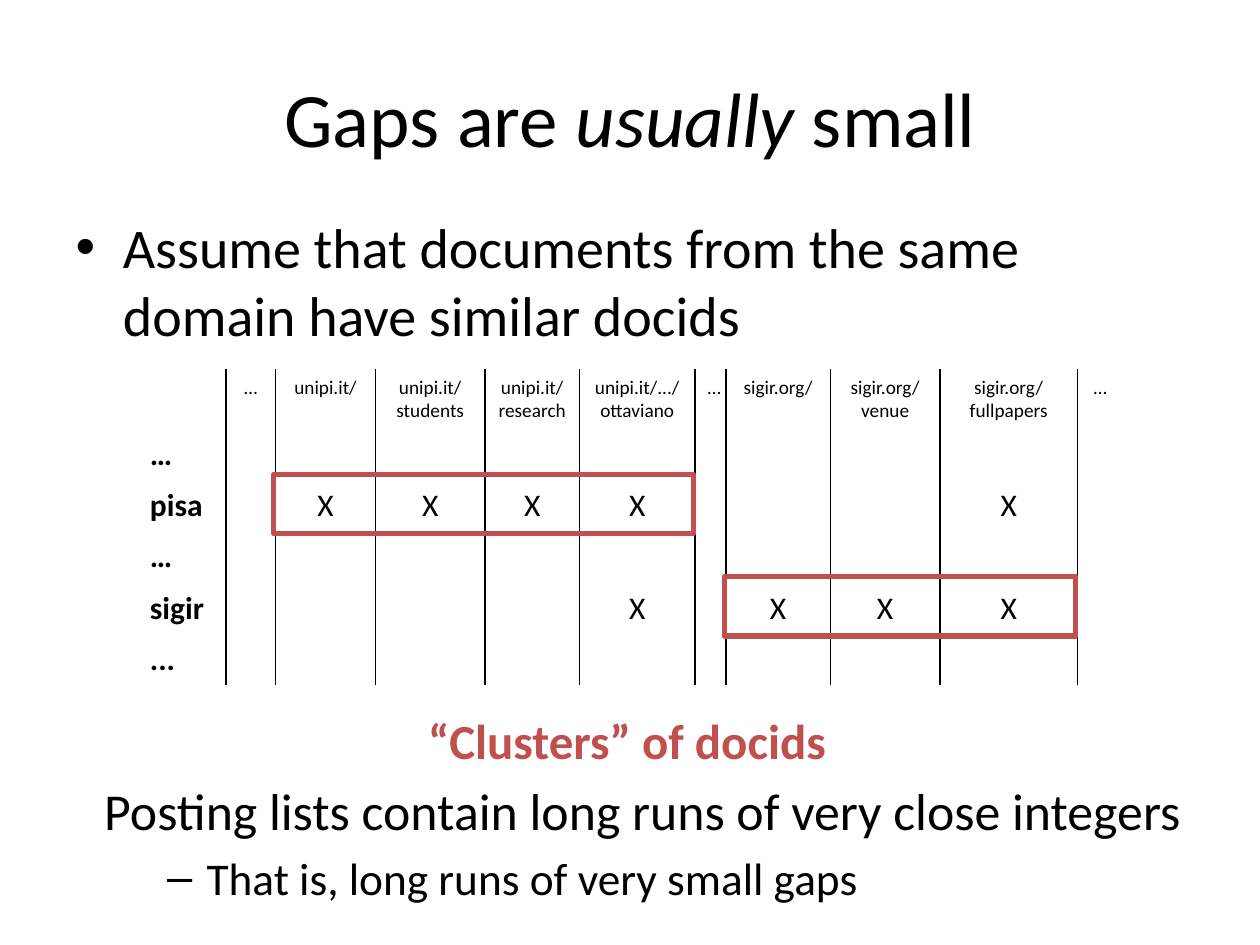
from copy import deepcopy

from lxml import etree
from pptx import Presentation
from pptx.dml.color import RGBColor
from pptx.enum.shapes import MSO_SHAPE
from pptx.enum.text import MSO_ANCHOR, PP_ALIGN
from pptx.oxml.ns import qn
from pptx.util import Pt

CENTER, LEFT = PP_ALIGN.CENTER, PP_ALIGN.LEFT
MIDDLE, TOP = MSO_ANCHOR.MIDDLE, MSO_ANCHOR.TOP
RECTANGLE = MSO_SHAPE.RECTANGLE

FONT = "Calibri"
COLORS = {"text": "000000", "grid": "000000", "cluster": "C0504D"}
PLAIN_TABLE_STYLE = "{2D5ABB26-0587-4C30-8999-92F81FD0307C}"

COLUMN_WIDTHS = [50.7, 28.3, 57.1, 62.6, 54, 66, 17.7, 59.7, 62.6, 78.6, 26]
ROW_HEIGHTS = [34.2] + [29.2] * 5
DOCUMENTS = ["…", "unipi.it/", "unipi.it/\nstudents", "unipi.it/\nresearch",
             "unipi.it/.../\nottaviano", "…", "sigir.org/",
             "sigir.org/\nvenue", "sigir.org/\nfullpapers", "…"]
TERMS = ["…", "pisa", "…", "sigir", "..."]
POSTINGS = {2: [2, 3, 4, 5, 9], 4: [5, 7, 8, 9]}
CLUSTERS = [(2, 2, 5), (4, 7, 9)]  # row, first column, last column


def write_text(paragraph, text, size, color="text", bold=False, italic=False,
               align=None):
    """Append text to a paragraph; a newline becomes a line break."""
    if align is not None:
        paragraph.alignment = align
    for index, line in enumerate(text.split("\n")):
        if index:
            paragraph.add_line_break()
        run = paragraph.add_run()
        run.text = line
        font = run.font
        font.name, font.size = FONT, Pt(size)
        font.bold, font.italic = bold, italic
        font.color.rgb = RGBColor.from_string(COLORS[color])
    for line_break in paragraph._p.findall(qn("a:br")):
        line_break.append(deepcopy(run._r.rPr))


def place(shape, box):
    shape.left, shape.top, shape.width, shape.height = map(Pt, box)


def add_title(slide, box):
    title = slide.shapes.title
    place(title, box)
    title.text_frame.vertical_anchor = MIDDLE
    paragraph = title.text_frame.paragraphs[0]
    for text, italic in [("Gaps are ", False), ("usually", True), (" small", False)]:
        write_text(paragraph, text, 44, italic=italic, align=CENTER)


def add_assumption(slide, box):
    body = slide.placeholders[1]
    place(body, box)
    write_text(body.text_frame.paragraphs[0],
               "Assume that documents from the same domain have similar docids", 32)


def set_side_border(cell, side):
    """Draw a thin line on one side ("L" or "R") of a cell."""
    line = etree.SubElement(cell._tc.get_or_add_tcPr(), qn(f"a:ln{side}"), w=str(Pt(1)))
    fill = etree.SubElement(line, qn("a:solidFill"))
    etree.SubElement(fill, qn("a:srgbClr"), val=COLORS["grid"])


def write_cell(cell, text, size, bold=False, align=CENTER, anchor=TOP):
    cell.vertical_anchor = anchor
    write_text(cell.text_frame.paragraphs[0], text, size, bold=bold, align=align)


def add_postings_table(slide, left, top):
    frame = slide.shapes.add_table(
        len(ROW_HEIGHTS), len(COLUMN_WIDTHS), Pt(left), Pt(top),
        Pt(sum(COLUMN_WIDTHS)), Pt(sum(ROW_HEIGHTS)))
    table = frame.table
    table.first_row = table.horz_banding = False
    table._tbl.tblPr.find(qn("a:tableStyleId")).text = PLAIN_TABLE_STYLE
    for column, width in zip(table.columns, COLUMN_WIDTHS):
        column.width = Pt(width)
    for row, height in zip(table.rows, ROW_HEIGHTS):
        row.height = Pt(height)
        for index, cell in enumerate(row.cells):
            if index > 0:
                set_side_border(cell, "L")
            if index < len(COLUMN_WIDTHS) - 1:
                set_side_border(cell, "R")
            cell.fill.background()

    for column, document in enumerate(DOCUMENTS, 1):
        write_cell(table.cell(0, column), document, 11)
    for row, term in enumerate(TERMS, 1):
        write_cell(table.cell(row, 0), term, 18, bold=True, align=LEFT)
    for row, columns in POSTINGS.items():
        for column in columns:
            write_cell(table.cell(row, column), "X", 18, anchor=MIDDLE)


def add_cluster_frames(slide, left, top):
    """Frame runs of neighbouring cells in the table at left, top."""
    height = 34
    for row, first, last in CLUSTERS:
        middle = top + sum(ROW_HEIGHTS[:row]) + ROW_HEIGHTS[row] / 2
        frame = slide.shapes.add_shape(RECTANGLE, 0, 0, 0, 0)
        place(frame, (left + sum(COLUMN_WIDTHS[:first]) - 1, middle - height / 2 - 1,
                      sum(COLUMN_WIDTHS[first:last + 1]), height))
        frame.shadow.inherit = False
        frame.fill.background()
        frame.line.color.rgb = RGBColor.from_string(COLORS["cluster"])
        frame.line.width = Pt(3)


def add_text_box(slide, box, wrap=True):
    text_box = slide.shapes.add_textbox(*map(Pt, box))
    text_box.text_frame.word_wrap = wrap
    return text_box.text_frame


def add_cluster_label(slide, box):
    text_frame = add_text_box(slide, box, wrap=False)
    write_text(text_frame.paragraphs[0], "“Clusters” of docids", 28,
               color="cluster", bold=True)


def add_conclusion(slide, box):
    text_frame = add_text_box(slide, box)
    write_text(text_frame.paragraphs[0],
               "Posting lists contain long runs of very close integers", 29.6)
    detail = text_frame.add_paragraph()
    detail.level = 1
    detail.space_before = Pt(5.2)
    write_text(detail, "That is, long runs of very small gaps", 25.9)
    properties = detail._p.get_or_add_pPr()
    properties.set("marL", str(Pt(58.5)))
    properties.set("indent", str(Pt(-22.5)))
    etree.SubElement(properties, qn("a:buFont"), typeface="Arial")
    etree.SubElement(properties, qn("a:buChar"), char="–")


def main():
    presentation = Presentation()
    presentation.slide_width, presentation.slide_height = Pt(720), Pt(540)
    slide = presentation.slides.add_slide(presentation.slide_layouts[1])
    table_corner = (78.5, 211)
    add_title(slide, (36, 21.6, 648, 90))
    add_assumption(slide, (36, 118, 648, 106.5))
    add_postings_table(slide, *table_corner)
    add_conclusion(slide, (52.5, 441.5, 648, 106.5))
    add_cluster_frames(slide, *table_corner)
    add_cluster_label(slide, (237.5, 402.5, 245.5, 41))
    presentation.save("out.pptx")


if __name__ == "__main__":
    main()
